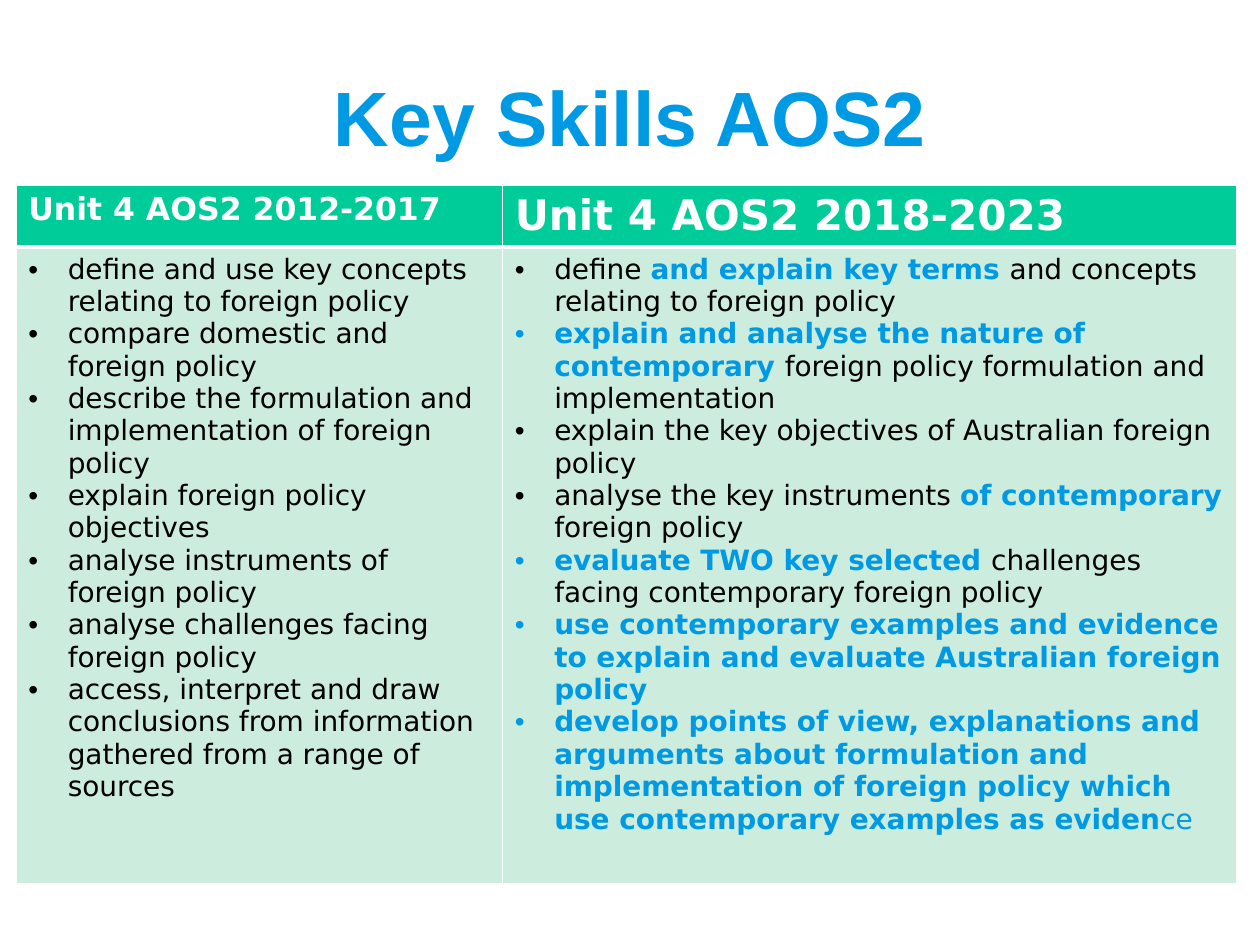
from lxml import etree
from pptx import Presentation
from pptx.dml.color import RGBColor
from pptx.enum.text import MSO_ANCHOR, PP_ALIGN
from pptx.oxml.ns import qn
from pptx.util import Pt

CENTER, MIDDLE = PP_ALIGN.CENTER, MSO_ANCHOR.MIDDLE
COLORS = {"blue": "0099E3", "green": "00CC99", "mint": "CCECDE",
          "white": "FFFFFF", "black": "000000"}
BODY_FONT = "DejaVu Sans"
INDENT = Pt(22.5)

# Header text and size, column width, and bullets for each column.
# Pieces between asterisks are new skills, set in bold blue.
COLUMNS = [
    ("Unit 4 AOS2 2012-2017", 18, 278, [
        "define and use key concepts relating to foreign policy",
        "compare domestic and foreign policy",
        "describe the formulation and implementation of foreign policy",
        "explain foreign policy objectives",
        "analyse instruments of foreign policy",
        "analyse challenges facing foreign policy",
        "access, interpret and draw conclusions from information gathered "
        "from a range of sources",
    ]),
    ("Unit 4 AOS2 2018-2023", 24, 419.5, [
        "define *and explain key terms *and concepts relating to foreign policy",
        "*explain and analyse the nature of contemporary *foreign policy "
        "formulation and implementation",
        "explain the key objectives of Australian foreign policy",
        "analyse the key instruments *of contemporary *foreign policy",
        "*evaluate TWO key selected *challenges facing contemporary foreign policy",
        "*use contemporary examples and evidence to explain and evaluate "
        "Australian foreign policy",
        "*develop points of view, explanations and arguments about formulation "
        "and implementation of foreign policy which use contemporary examples "
        "as eviden*ce",
    ]),
]


def add_run(paragraph, text, color, **format_values):
    run = paragraph.add_run()
    run.text = text
    for name, value in format_values.items():
        setattr(run.font, name, value)
    run.font.color.rgb = RGBColor.from_string(COLORS[color])


def style_cell(cell, fill, bottom_width):
    """Give a cell white borders and a solid fill."""
    properties = cell._tc.get_or_add_tcPr()
    for side, width in (("L", 1), ("R", 1), ("T", 1), ("B", bottom_width)):
        line = etree.SubElement(properties, qn(f"a:ln{side}"), w=str(Pt(width)))
        solid = etree.SubElement(line, qn("a:solidFill"))
        etree.SubElement(solid, qn("a:srgbClr"), val=COLORS["white"])
    cell.fill.solid()
    cell.fill.fore_color.rgb = RGBColor.from_string(COLORS[fill])


presentation = Presentation()
presentation.slide_width, presentation.slide_height = Pt(720), Pt(540)
slide = presentation.slides.add_slide(presentation.slide_layouts[5])

title = slide.shapes.title
title.left, title.top, title.width, title.height = Pt(54), Pt(21), Pt(612), Pt(90)
title.text_frame.vertical_anchor = MIDDLE
heading = title.text_frame.paragraphs[0]
heading.alignment = CENTER
add_run(heading, "Key Skills AOS2", "blue", size=Pt(44), name="Arial", bold=True)

table = slide.shapes.add_table(2, 2, Pt(9), Pt(106), Pt(697.5), Pt(399)).table
table.rows[0].height, table.rows[1].height = Pt(35), Pt(364)

for index, (header, size, width, bullets) in enumerate(COLUMNS):
    table.columns[index].width = Pt(width)
    header_cell, body_cell = table.cell(0, index), table.cell(1, index)
    style_cell(header_cell, "green", 3)
    style_cell(body_cell, "mint", 1)
    add_run(header_cell.text_frame.paragraphs[0], header, "white",
            size=Pt(size), name=BODY_FONT, bold=True)

    frame = body_cell.text_frame
    for number, bullet in enumerate(bullets):
        paragraph = frame.add_paragraph() if number else frame.paragraphs[0]
        properties = paragraph._p.get_or_add_pPr()
        properties.set("marL", str(INDENT))
        properties.set("indent", str(-INDENT))
        etree.SubElement(properties, qn("a:buFont"), typeface="Arial")
        etree.SubElement(properties, qn("a:buChar"), char="•")
        for part, text in enumerate(bullet.split("*")):
            is_new = part % 2 == 1
            # The last two letters of the final bullet are blue but not bold.
            color = "blue" if is_new or text == "ce" else "black"
            if text:
                add_run(paragraph, text, color, size=Pt(16), name=BODY_FONT,
                        bold=is_new)

presentation.save("out.pptx")
